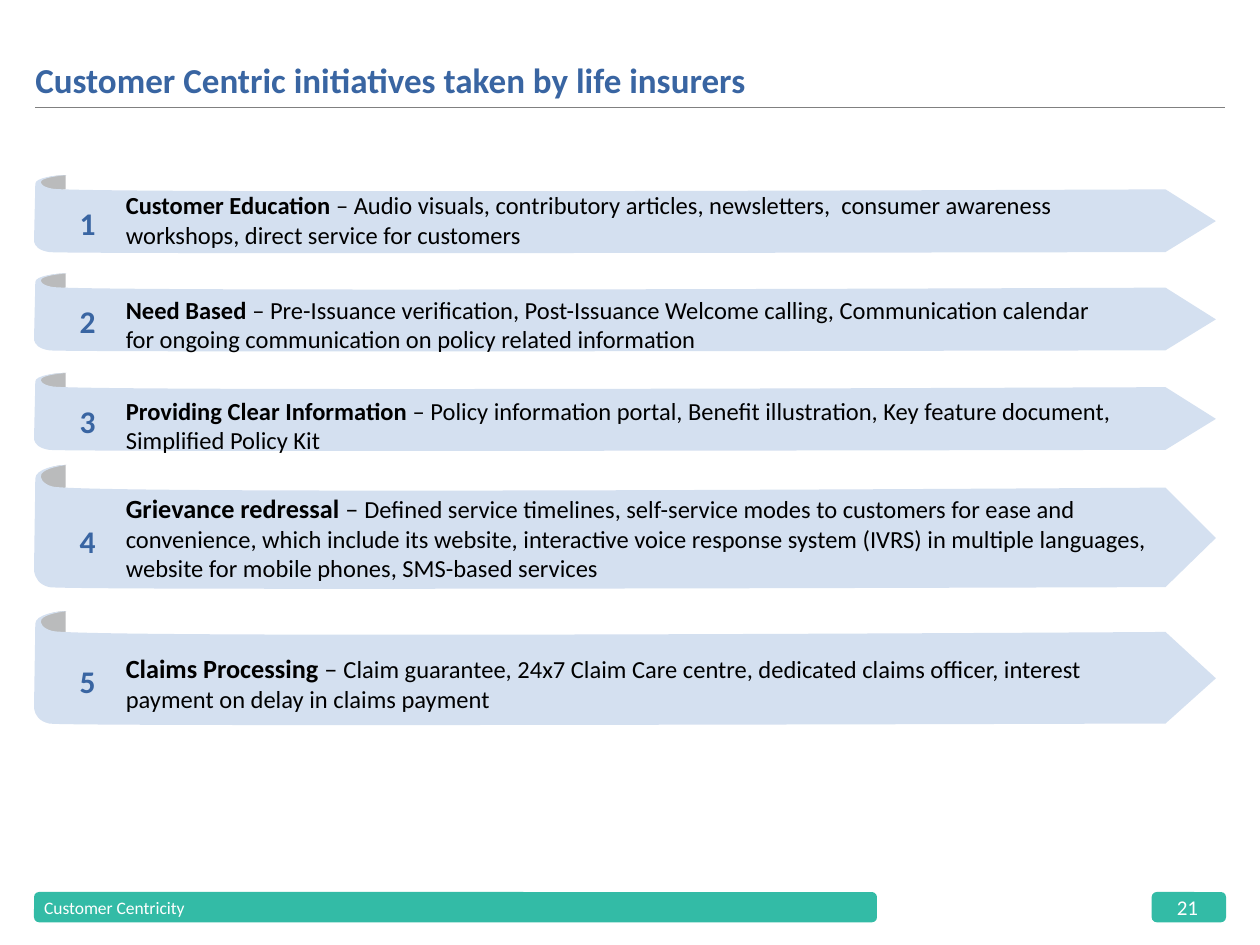
"""Build the slide on customer centric initiatives taken by life insurers."""
from dataclasses import dataclass

from lxml import etree
from pptx import Presentation
from pptx.dml.color import RGBColor
from pptx.enum.shapes import MSO_CONNECTOR, MSO_SHAPE
from pptx.enum.text import MSO_ANCHOR, MSO_AUTO_SIZE, PP_ALIGN
from pptx.oxml.ns import qn
from pptx.util import Inches, Pt

STRAIGHT = MSO_CONNECTOR.STRAIGHT
ROUNDED = MSO_SHAPE.ROUNDED_RECTANGLE
TOP, MIDDLE, BOTTOM = MSO_ANCHOR.TOP, MSO_ANCHOR.MIDDLE, MSO_ANCHOR.BOTTOM
LEFT, CENTER = PP_ALIGN.LEFT, PP_ALIGN.CENTER
NO_AUTO_SIZE = MSO_AUTO_SIZE.NONE
TITLE_ONLY_LAYOUT = 5


@dataclass(frozen=True)
class Theme:
    """Colours, font and type sizes of the slide."""
    font: str = "Calibri"
    heading: RGBColor = RGBColor(0x39, 0x65, 0xA2)
    body: RGBColor = RGBColor(0, 0, 0)
    white: RGBColor = RGBColor(255, 255, 255)
    ribbon: RGBColor = RGBColor(0xD4, 0xE0, 0xF0)
    fold: RGBColor = RGBColor(0xBA, 0xBB, 0xBC)
    footer: RGBColor = RGBColor(0x33, 0xBB, 0xA6)
    rule: RGBColor = RGBColor(0x80, 0x80, 0x80)
    title_size: float = 20
    number_size: float = 18
    large_size: float = 15
    body_size: float = 14
    page_size: float = 12
    footer_size: float = 10


THEME = Theme()


@dataclass(frozen=True)
class Initiative:
    """One ribbon: its band, its text box and its wording."""
    top: float
    height: float
    text_top: float
    text_height: float
    heading: str
    detail: str
    heading_size: float = THEME.body_size
    text_width: float = 8.02


INITIATIVES = [
    Initiative(1.39, 0.63, 1.46, 0.57, "Customer Education ",
               "Audio visuals, contributory articles, newsletters,  consumer awareness "
               "workshops, direct service for customers"),
    Initiative(2.17, 0.63, 2.29, 0.57, "Need Based ",
               "Pre-Issuance verification, Post-Issuance Welcome calling, Communication "
               "calendar for ongoing communication on policy related information"),
    Initiative(2.96, 0.63, 3.09, 0.57, "Providing Clear Information ",
               "Policy information portal, Benefit illustration, Key feature document, "
               "Simplified Policy Kit"),
    Initiative(3.69, 1, 3.86, 0.82, "Grievance redressal ",
               "Defined service timelines, self-service modes to customers for ease and "
               "convenience, which include its website, interactive voice response system "
               "(IVRS) in multiple languages, website for mobile phones, SMS-based services",
               THEME.large_size, 8.36),
    Initiative(4.85, 0.92, 5.13, 0.59, "Claims Processing ",
               "Claim guarantee, 24x7 Claim Care centre, dedicated claims officer, interest "
               "payment on delay in claims payment", THEME.large_size),
]

FOLD_START = (0.52, 0)
FOLD_CURVES = [
    (0.52, 0), (0.38, 0), (0.32, 0.07),
    (0.27, 0.14), (0.46, 0.21), (0.52, 0.18),
]
RIBBON_START = (9.65, 0.58)
RIBBON_CURVES = [
    (9.25, 0.97), (9.25, 0.97), (9.25, 0.97),
    (9.25, 0.97), (0.48, 1), (0.39, 0.97),
    (0.31, 0.95), (0.28, 0.9), (0.27, 0.84),
    (0.27, 0.78), (0.28, 0.19), (0.28, 0.11),
    (0.28, 0.03), (0.45, 0), (0.53, 0),
    (0.46, 0.01), (0.36, 0.03), (0.33, 0.07),
    (0.31, 0.1), (0.34, 0.15), (0.41, 0.17),
    (0.59, 0.24), (9.25, 0.18), (9.25, 0.18),
]


def style_shape(shape, color):
    """Give a shape a plain fill without line or shadow."""
    shape.shadow.inherit = False
    shape.fill.solid()
    shape.fill.fore_color.rgb = color
    shape.line.fill.background()


def bend_segments(shape):
    """Turn each three line segments of a freeform into one cubic curve."""
    segments = list(shape.element.iter(qn("a:lnTo")))
    for index in range(0, len(segments), 3):
        first, *others = segments[index:index + 3]
        curve = etree.Element(qn("a:cubicBezTo"))
        first.addprevious(curve)
        for segment in (first, *others):
            curve.append(segment[0])
            segment.getparent().remove(segment)


def add_outline(shapes, start, curves, top, height, color):
    """Draw a curved outline, its vertical shares scaled to the height."""
    points = [(Inches(x), Inches(top + share * height)) for x, share in (start, *curves)]
    builder = shapes.build_freeform(*points[0])
    builder.add_line_segments(points[1:], close=True)
    shape = builder.convert_to_shape()
    bend_segments(shape)
    style_shape(shape, color)


def place(shape, left, top, width, height):
    """Set the position and size of a shape in inches."""
    shape.left, shape.top = Inches(left), Inches(top)
    shape.width, shape.height = Inches(width), Inches(height)


def write_text(shape, runs, anchor=MIDDLE, align=LEFT, wrap=True, margins=(0, 0)):
    """Write one paragraph from runs of text, size, colour and bold."""
    frame = shape.text_frame
    frame.auto_size = NO_AUTO_SIZE
    frame.word_wrap = wrap
    frame.vertical_anchor = anchor
    frame.margin_left = frame.margin_right = Inches(margins[0])
    frame.margin_top = frame.margin_bottom = Inches(margins[1])
    paragraph = frame.paragraphs[0]
    paragraph.alignment = align
    for text, size, color, bold in runs:
        run = paragraph.add_run()
        run.text = text
        run.font.name = THEME.font
        run.font.size = Pt(size)
        run.font.color.rgb = color
        run.font.bold = bold


def add_text(shapes, box, runs, **options):
    """Add a text box in the given box."""
    write_text(shapes.add_textbox(*map(Inches, box)), runs, **options)


def add_title(slide):
    """Fill the title placeholder and draw the rule below it."""
    title = slide.shapes.title
    place(title, 0.28, 0.09, 9.45, 0.71)
    write_text(title, [("Customer Centric initiatives taken by life insurers",
                        THEME.title_size, THEME.heading, True)], anchor=BOTTOM)
    rule = slide.shapes.add_connector(STRAIGHT, Inches(0.28), Inches(0.85),
                                      Inches(9.72), Inches(0.85))
    rule.line.color.rgb = THEME.rule
    rule.line.width = Pt(0.5)
    etree.SubElement(rule.element.spPr, qn("a:effectLst"))


def add_initiative(slide, number, item):
    """Add a numbered ribbon with its heading and detail."""
    shapes = slide.shapes.add_group_shape().shapes
    add_outline(shapes, FOLD_START, FOLD_CURVES, item.top, item.height, THEME.fold)
    add_outline(shapes, RIBBON_START, RIBBON_CURVES, item.top, item.height, THEME.ribbon)
    add_text(shapes, (0.17, item.top + 0.2 * item.height, 1.05, 0.8 * item.height),
             [(str(number), THEME.number_size, THEME.heading, True)], align=CENTER)
    runs = [(item.heading, item.heading_size, THEME.body, True)]
    if item.heading_size == THEME.body_size:
        runs.append(("– " + item.detail, THEME.body_size, THEME.body, False))
    else:
        runs += [("– ", item.heading_size, THEME.body, False),
                 (item.detail, THEME.body_size, THEME.body, False)]
    add_text(shapes, (0.9, item.text_top, item.text_width, item.text_height), runs,
             anchor=TOP, margins=(0.1, 0.05))


def add_footer(slide):
    """Add the footer bars with the section name and page number."""
    for left, width in ((0.27, 6.69), (9.14, 0.59)):
        bar = slide.shapes.add_shape(ROUNDED, Inches(left), Inches(7.08),
                                     Inches(width), Inches(0.24))
        style_shape(bar, THEME.footer)
    for left, width, text, size in ((0.35, 3.15, "Customer Centricity", THEME.footer_size),
                                    (9.34, 0.2, "21", THEME.page_size)):
        add_text(slide.shapes, (left, 7.1, width, 0.2),
                 [(text, size, THEME.white, False)], wrap=False)


def main():
    """Build and save the presentation."""
    presentation = Presentation()
    presentation.slide_width, presentation.slide_height = Inches(10), Inches(7.5)
    slide = presentation.slides.add_slide(presentation.slide_layouts[TITLE_ONLY_LAYOUT])
    add_title(slide)
    for number, item in enumerate(INITIATIVES, start=1):
        add_initiative(slide, number, item)
    add_footer(slide)
    presentation.save("out.pptx")


if __name__ == "__main__":
    main()
